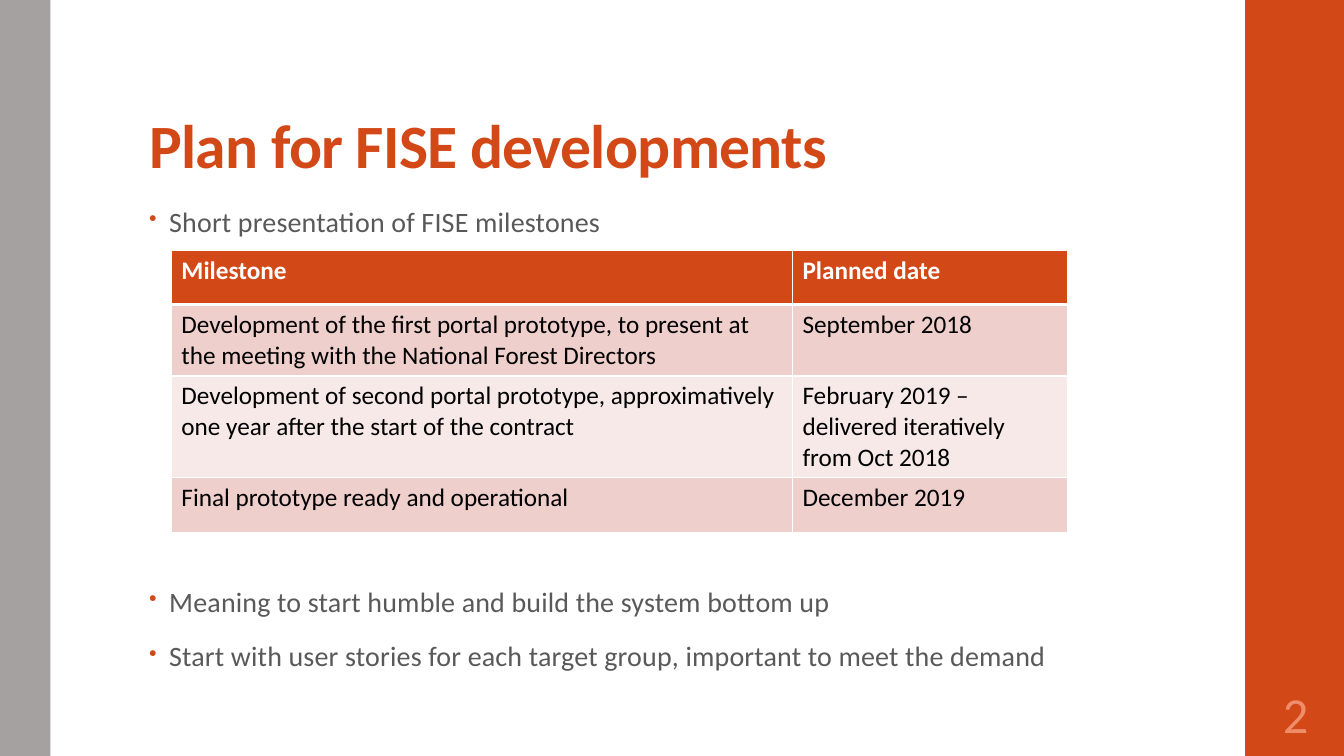
from lxml.etree import SubElement
from pptx import Presentation
from pptx.dml.color import RGBColor
from pptx.enum.shapes import MSO_SHAPE as Preset
from pptx.enum.text import MSO_ANCHOR as Anchor, MSO_AUTO_SIZE as AutoSize, PP_ALIGN as Align
from pptx.oxml.ns import qn
from pptx.util import Pt

EMU_PER_PX = 9144  # 100 px to the inch
ORANGE = RGBColor(0xD3, 0x48, 0x17)
GRAY = RGBColor(0xA6, 0xA1, 0xA1)
BODY_GRAY = RGBColor(0x59, 0x59, 0x59)
PALE_ORANGE = RGBColor(0xEF, 0x8C, 0x6A)
ROSE = RGBColor(0xEF, 0xCF, 0xCC)
LIGHT_ROSE = RGBColor(0xF7, 0xE9, 0xE8)
WHITE = RGBColor(0xFF, 0xFF, 0xFF)
BLACK = RGBColor(0, 0, 0)

MILESTONES = [
    ("Milestone", "Planned date"),
    ("Development of the first portal prototype, to present at the meeting "
     "with the National Forest Directors", "September 2018"),
    ("Development of second portal prototype, approximatively one year after "
     "the start of the contract", "February 2019 – delivered iteratively from Oct 2018"),
    ("Final prototype ready and operational", "December 2019"),
]


def px(*lengths):
    return [length * EMU_PER_PX for length in lengths]


def add_bullet(paragraph, indent):
    properties = paragraph._p.get_or_add_pPr()
    properties.set("marL", str(indent))
    properties.set("indent", str(-indent))
    color = SubElement(properties, qn("a:buClr"))
    SubElement(color, qn("a:srgbClr"), val=str(ORANGE))
    SubElement(properties, qn("a:buSzPct"), val="80000")
    SubElement(properties, qn("a:buChar"), char="•")


def write(paragraph, text, size, color, bold=False, align=Align.LEFT,
          line_spacing=None, tracking=0):
    paragraph.alignment = align
    if line_spacing:
        paragraph.line_spacing = line_spacing
    run = paragraph.add_run()
    run.text = text
    font = run.font
    font.name, font.size, font.bold = "Calibri", Pt(size), bold
    font.color.rgb = color
    if tracking:
        run._r.get_or_add_rPr().set("spc", str(tracking))


def set_borders(cell, **widths):
    properties = cell._tc.get_or_add_tcPr()
    for index, (side, width) in enumerate(widths.items()):
        line = SubElement(properties, qn(f"a:ln{side}"), w=str(Pt(width)))
        fill = SubElement(line, qn("a:solidFill"))
        SubElement(fill, qn("a:srgbClr"), val=str(WHITE))
        properties.insert(index, line)


class SlideBuilder:
    def __init__(self, presentation):
        self.slide = presentation.slides.add_slide(presentation.slide_layouts[5])
        self.shapes = self.slide.shapes

    def bar(self, left, top, width, height, color):
        shape = self.shapes.add_shape(Preset.RECTANGLE, *px(left, top, width, height))
        shape.shadow.inherit = False
        shape.fill.solid()
        shape.fill.fore_color.rgb = color
        shape.line.fill.background()

    def title(self, text, left, top, width, height):
        title = self.shapes.title
        title.left, title.top, title.width, title.height = px(left, top, width, height)
        frame = title.text_frame
        frame.auto_size = AutoSize.NONE
        frame.vertical_anchor = Anchor.BOTTOM
        frame.margin_left, frame.margin_top, frame.margin_right, frame.margin_bottom = px(10, 3, 10, 5)
        write(frame.paragraphs[0], text, 44, ORANGE, bold=True, line_spacing=0.9, tracking=-50)

    def text_frame(self, left, top, width, height):
        frame = self.shapes.add_textbox(*px(left, top, width, height)).text_frame
        frame.word_wrap = True
        return frame

    def bullets(self, texts, left, top, width, height):
        frame = self.text_frame(left, top, width, height)
        for index, text in enumerate(texts):
            paragraph = frame.add_paragraph() if index else frame.paragraphs[0]
            paragraph.space_before = Pt(14 if index else 0)
            paragraph.space_after = Pt(2)
            paragraph.line_spacing = 0.95
            add_bullet(paragraph, *px(20))
            write(paragraph, text, 20, BODY_GRAY, tracking=10)

    def table(self, rows, left, top, column_widths, row_heights):
        size = px(sum(column_widths), sum(row_heights))
        table = self.shapes.add_table(len(rows), len(column_widths), *px(left, top), *size).table
        for column, width in zip(table.columns, px(*column_widths)):
            column.width = width
        for row, height in zip(table.rows, px(*row_heights)):
            row.height = height
        for row_index, texts in enumerate(rows):
            header = row_index == 0
            band = ROSE if row_index % 2 else LIGHT_ROSE
            for column_index, text in enumerate(texts):
                cell = table.cell(row_index, column_index)
                cell.fill.solid()
                cell.fill.fore_color.rgb = ORANGE if header else band
                set_borders(cell, L=1, R=1, T=3 if row_index == 1 else 1, B=3 if header else 1)
                write(cell.text_frame.paragraphs[0], text, 18,
                      WHITE if header else BLACK, bold=header)

    def page_number(self, text, left, top, width, height):
        frame = self.text_frame(left, top, width, height)
        frame.vertical_anchor = Anchor.MIDDLE
        frame.margin_left, frame.margin_right = px(5, 5)
        write(frame.paragraphs[0], text, 36, PALE_ORANGE, align=Align.CENTER)


def main():
    presentation = Presentation()
    presentation.slide_width, presentation.slide_height = px(1333, 750)
    builder = SlideBuilder(presentation)

    # Side bars
    builder.bar(1235, 0, 98, 750, ORANGE)
    builder.bar(0, 0, 50, 750, GRAY)

    # Title and text around the table
    builder.title("Plan for FISE developments", 138, 32, 1060, 153)
    builder.bullets(["Short presentation of FISE milestones"], 138, 200, 940, 45)
    builder.bullets(["Meaning to start humble and build the system bottom up",
                     "Start with user stories for each target group, important to meet the demand"],
                    138, 577, 940, 99)

    # Milestone table
    builder.table(MILESTONES, 170, 248, [616, 273], [54, 71, 101, 54])

    # Page number
    builder.page_number("2", 1235, 675, 100, 65)

    presentation.save("out.pptx")


if __name__ == "__main__":
    main()
